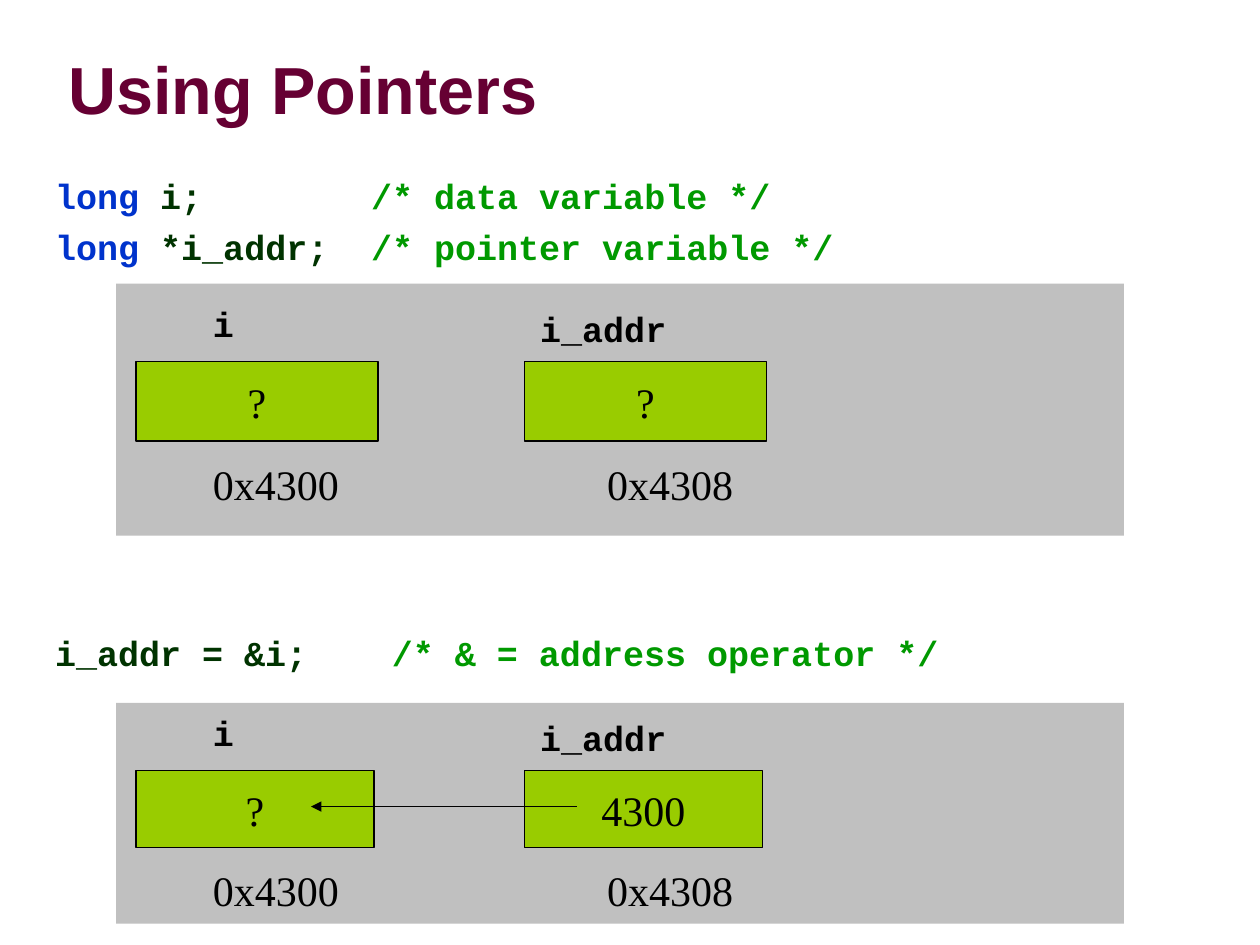
import pptx
import pptx.util
import pptx.dml.color
import pptx.enum.shapes
import pptx.enum.text
import lxml.etree
from pptx.oxml.ns import qn
from pptx.util import Cm, Pt

COLORS = {
    "title": "660033", "keyword": "0033CC", "code": "003300", "comment": "009900",
    "panel": "C0C0C0", "cell": "99CC00", "black": "000000",
}
CODE_FONT, VALUE_FONT = "Courier New", "Times New Roman"


def format_span(span, font, size, color, bold=False):
    span.font.name = font
    span.font.size = Pt(size)
    span.font.bold = bold
    span.font.color.rgb = pptx.dml.color.RGBColor.from_string(COLORS[color])


def add_rectangle(left, top, width, height, fill):
    box = page.shapes.add_shape(
        pptx.enum.shapes.MSO_SHAPE.RECTANGLE, Cm(left), Cm(top), Cm(width), Cm(height))
    box.shadow.inherit = False
    box.fill.solid()
    box.fill.fore_color.rgb = pptx.dml.color.RGBColor.from_string(COLORS[fill])
    box.line.fill.background()
    return box


deck = pptx.Presentation()
deck.slide_width, deck.slide_height = Cm(25.4), Cm(19.05)
page = deck.slides.add_slide(deck.slide_layouts[5])
black = pptx.dml.color.RGBColor.from_string(COLORS["black"])

# Title
title = page.shapes.title
title.left, title.top, title.width, title.height = Cm(1.12), Cm(0.84), Cm(24.2), Cm(1.88)
title.text_frame.text = "Using Pointers"
title.text_frame.vertical_anchor = pptx.enum.text.MSO_ANCHOR.MIDDLE
title.text_frame.paragraphs[0].alignment = pptx.enum.text.PP_ALIGN.LEFT
format_span(title.text_frame.paragraphs[0].runs[0], "Arial", 38, "title", True)

# Code: space before, tab stop of the comment, coloured pieces
code_lines = [
    (5, 6.37, [("long ", "keyword"), ("i;\t", "code"), ("/* data variable */", "comment")]),
    (5, 6.37, [("long", "keyword"), (" *i_addr;\t", "code"),
               ("/* pointer variable */", "comment")]),
    (208, 6.79, [("i_addr = &i;\t", "code"), ("/* & = address operator */", "comment")]),
]
code = page.shapes.add_textbox(Cm(0.86), Cm(3.4), Cm(23.04), Cm(14.53))
code.text_frame.word_wrap = True
for number, (space, stop, pieces) in enumerate(code_lines):
    para = code.text_frame.add_paragraph() if number else code.text_frame.paragraphs[0]
    para.space_before = Pt(space)
    tabs = lxml.etree.SubElement(para._p.get_or_add_pPr(), qn("a:tabLst"))
    lxml.etree.SubElement(tabs, qn("a:tab"), pos=str(int(Cm(stop))), algn="l")
    for text, color in pieces:
        span = para.add_run()
        span.text = text
        format_span(span, CODE_FONT, 20, color, True)

# Memory before and after the assignment:
# panel top and height, cell top, width and height, cell values
memories = [
    (5.72, 5.08, 7.29, 4.88, 1.6, ("?", "?")),
    (14.17, 4.45, 15.54, 4.8, 1.55, ("?", "4300")),
]
# Variable: cell left, name, name left, name offset above the cell, address left, address
variables = [
    (2.74, "i", 4.04, 1.32, 4.04, "0x4300"),
    (10.57, "i_addr", 10.64, 1.22, 11.99, "0x4308"),
]
for panel_top, panel_height, cell_top, cell_width, cell_height, values in memories:
    add_rectangle(2.34, panel_top, 20.32, panel_height, "panel")
    for value, (cell_left, name, name_left, rise, address_left, address) in zip(
            values, variables):
        cell = add_rectangle(cell_left, cell_top, cell_width, cell_height, "cell")
        cell.line.color.rgb = black
        cell.line.width = Pt(0.75)
        cell.text_frame.text = value
        cell.text_frame.word_wrap = False
        cell.text_frame.vertical_anchor = pptx.enum.text.MSO_ANCHOR.MIDDLE
        cell.text_frame.paragraphs[0].alignment = pptx.enum.text.PP_ALIGN.CENTER
        format_span(cell.text_frame.paragraphs[0].runs[0], VALUE_FONT, 24, "black")

        labels = [
            (name, name_left, cell_top - rise, 0.55 + 0.43 * len(name), 1.12,
             CODE_FONT, 20, True),
            (address, address_left, cell_top + cell_height + 0.22, 3.1, 1.3,
             VALUE_FONT, 24, False),
        ]
        for text, left, top, width, height, font, size, bold in labels:
            label = page.shapes.add_textbox(Cm(left), Cm(top), Cm(width), Cm(height))
            label.text_frame.text = text
            label.text_frame.word_wrap = False
            label.text_frame.auto_size = pptx.enum.text.MSO_AUTO_SIZE.SHAPE_TO_FIT_TEXT
            format_span(label.text_frame.paragraphs[0].runs[0], font, size, "black", bold)

# Arrow from the stored address to the variable it points at
arrow = page.shapes.add_connector(
    pptx.enum.shapes.MSO_CONNECTOR.STRAIGHT, Cm(11.63), Cm(16.26), Cm(6.27), Cm(16.26))
arrow.line.color.rgb = black
arrow.line.width = Pt(0.75)
lxml.etree.SubElement(arrow.line._get_or_add_ln(), qn("a:tailEnd"), type="triangle")
lxml.etree.SubElement(arrow._element.spPr, qn("a:effectLst"))

deck.save("out.pptx")
